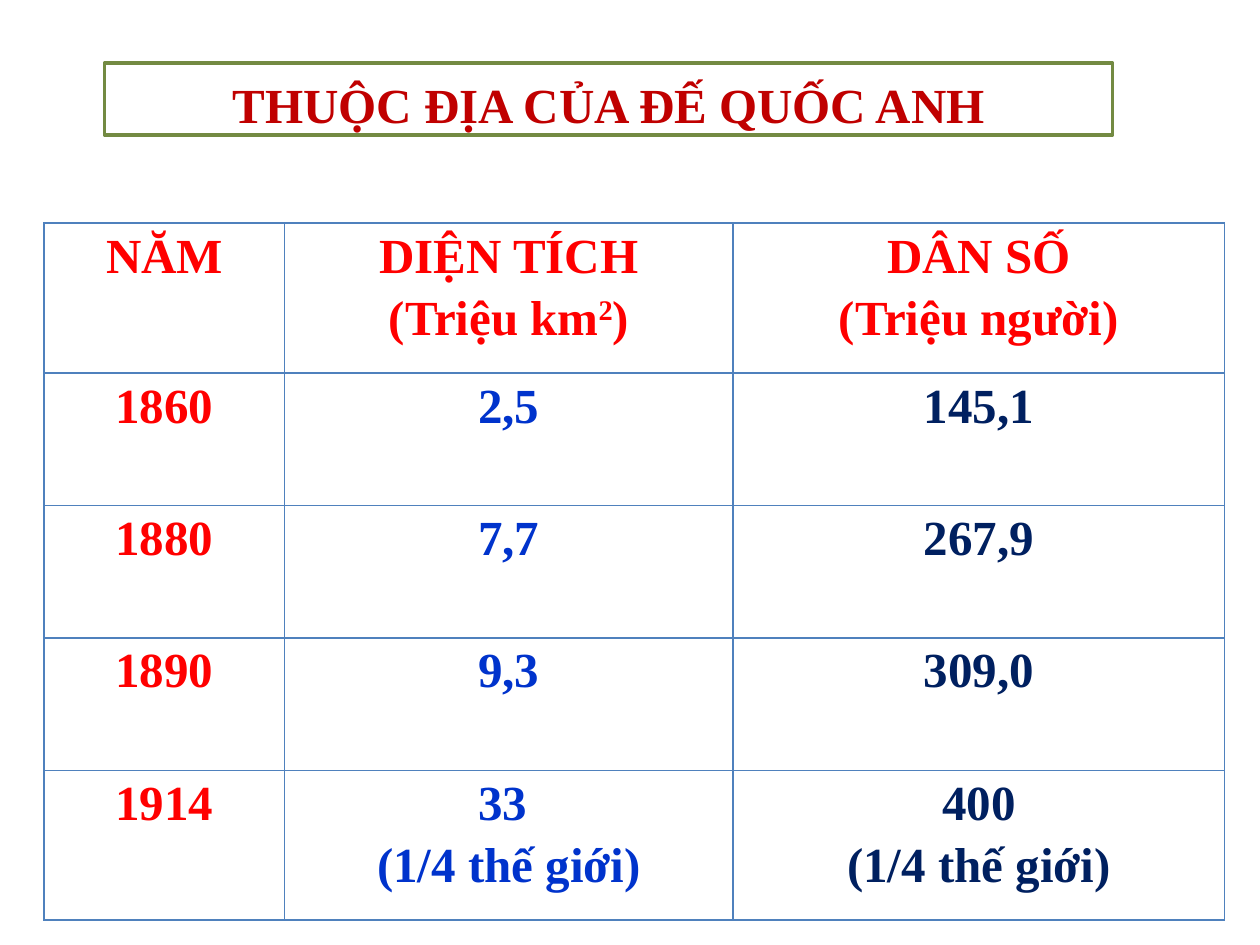
from dataclasses import dataclass

from lxml.etree import SubElement
from pptx import Presentation
from pptx.dml.color import RGBColor
from pptx.enum.shapes import MSO_SHAPE
from pptx.enum.text import MSO_ANCHOR, PP_ALIGN
from pptx.oxml import parse_xml
from pptx.oxml.ns import nsdecls
from pptx.table import _Cell
from pptx.text.text import _Paragraph
from pptx.util import Cm, Pt

RED = RGBColor(0xFF, 0x00, 0x00)
BLUE = RGBColor(0x00, 0x33, 0xCC)
NAVY = RGBColor(0x00, 0x20, 0x60)
DARK_RED = RGBColor(0xC0, 0x00, 0x00)
GREEN = RGBColor(0x73, 0x8A, 0x42)
BORDER = RGBColor(0x4F, 0x81, 0xBD)


@dataclass(frozen=True)
class Column:
    heading: str
    width: float
    color: RGBColor
    values: tuple[str, ...]


# A caret marks the next character as superscript.
COLUMNS = (
    Column("NĂM", 4.85, RED, ("1860", "1880", "1890", "1914")),
    Column("DIỆN TÍCH\n(Triệu km^2)", 9.04, BLUE,
           ("2,5", "7,7", "9,3", "33 \n(1/4 thế giới)")),
    Column("DÂN SỐ\n(Triệu người)", 9.91, NAVY,
           ("145,1", "267,9", "309,0", "400\n(1/4 thế giới)")),
)
ROW_HEIGHTS = (3.02, 2.67, 2.67, 2.67, 3.02)


def write_line(para: _Paragraph, text: str, color: RGBColor) -> None:
    before, _, raised = text.partition("^")
    para.add_run().text = before
    if raised:
        span = para.add_run()
        span.text = raised[0]
        span.font._element.set("baseline", "30000")
        para.add_run().text = raised[1:]
    para.alignment = PP_ALIGN.CENTER
    para.font.name = "Times New Roman"
    para.font.size = Pt(28)
    para.font.bold = True
    para.font.color.rgb = color


def draw_borders(cell: _Cell) -> None:
    properties = cell._tc.get_or_add_tcPr()
    for side in ("lnL", "lnR", "lnT", "lnB"):
        line = parse_xml(f'<a:{side} {nsdecls("a")} w="{Pt(1)}"><a:solidFill/></a:{side}>')
        SubElement(line[0], f"{{{line.nsmap['a']}}}srgbClr", val=str(BORDER))
        properties.append(line)


def fill_cell(cell: _Cell, text: str, color: RGBColor) -> None:
    draw_borders(cell)
    cell.fill.background()
    frame = cell.text_frame
    for index, line in enumerate(text.split("\n")):
        para = frame.add_paragraph() if index else frame.paragraphs[0]
        if index:
            para.space_before = Pt(4.5)
        write_line(para, line, color)


def add_title(shapes) -> None:
    box = shapes.add_shape(MSO_SHAPE.RECTANGLE, Cm(2.11), Cm(1.27), Cm(20.32), Cm(1.45))
    box.shadow.inherit = False
    box.fill.background()
    box.line.color.rgb = GREEN
    box.line.width = Pt(2)
    frame = box.text_frame
    frame.word_wrap = True
    frame.vertical_anchor = MSO_ANCHOR.TOP
    frame.margin_top = Cm(0.23)
    write_line(frame.paragraphs[0], "THUỘC ĐỊA CỦA ĐẾ QUỐC ANH", DARK_RED)


def add_colony_table(shapes) -> None:
    table = shapes.add_table(
        len(ROW_HEIGHTS), len(COLUMNS), Cm(0.89), Cm(4.5),
        Cm(sum(column.width for column in COLUMNS)), Cm(sum(ROW_HEIGHTS)),
    ).table
    table.first_row = False
    table.horz_banding = False
    for row, height in zip(table.rows, ROW_HEIGHTS):
        row.height = Cm(height)
    for column_index, column in enumerate(COLUMNS):
        table.columns[column_index].width = Cm(column.width)
        fill_cell(table.cell(0, column_index), column.heading, RED)
        for row_index, value in enumerate(column.values, start=1):
            fill_cell(table.cell(row_index, column_index), value, column.color)


def main() -> None:
    deck = Presentation()
    deck.slide_width, deck.slide_height = Cm(25.4), Cm(19.05)
    page = deck.slides.add_slide(deck.slide_layouts[6])
    add_colony_table(page.shapes)
    add_title(page.shapes)
    deck.save("out.pptx")


if __name__ == "__main__":
    main()
